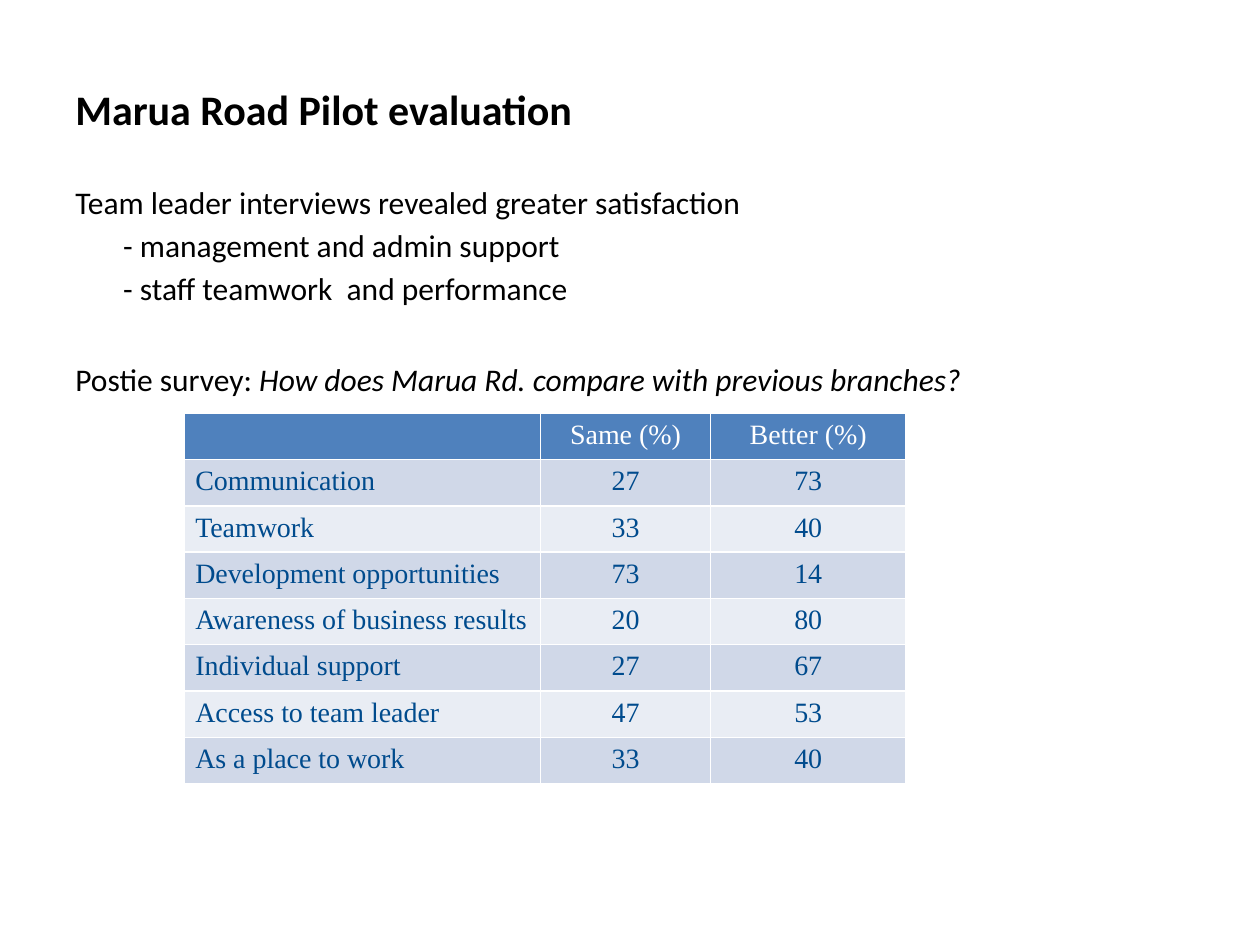
from dataclasses import dataclass

from lxml import etree
from pptx import Presentation
from pptx import util as u
from pptx.dml.color import RGBColor
from pptx.enum import text
from pptx.oxml import ns


@dataclass(frozen=True)
class Theme:
    body_font: str = "Calibri"
    table_font: str = "Times New Roman"
    title_size: float = 24
    body_size: float = 18
    table_size: float = 16
    ink: str = "000000"
    white: str = "FFFFFF"
    header: str = "4F81BD"
    table_ink: str = "004B8D"
    bands: tuple = ("D0D8E8", "E9EDF4")
    rule_width: float = 1


class SlideBuilder:
    def __init__(self, slide, theme):
        self.slide, self.theme = slide, theme

    def add_run(self, paragraph, words, font, size, color, bold=False, italic=False):
        run = paragraph.add_run()
        run.text = words
        run.font.name, run.font.size = font, u.Pt(size)
        run.font.bold, run.font.italic = bold, italic
        run.font.color.rgb = RGBColor.from_string(color)

    def add_body(self, left, top, width, height, top_inset, lines):
        """Each line is (space before, indent, size, bold, [(words, italic)])."""
        frame = self.slide.shapes.add_textbox(
            *map(u.Inches, (left, top, width, height))).text_frame
        frame.word_wrap = True
        frame.margin_top = u.Inches(top_inset)
        for i, (before, indent, size, bold, runs) in enumerate(lines):
            paragraph = frame.add_paragraph() if i else frame.paragraphs[0]
            paragraph.space_before = u.Pt(before)
            paragraph._p.get_or_add_pPr().set("marL", str(u.Inches(indent)))
            for words, italic in runs:
                self.add_run(paragraph, words, self.theme.body_font, size,
                             self.theme.ink, bold, italic)

    def add_borders(self, cell):
        properties = cell._tc.get_or_add_tcPr()
        for position, side in enumerate(("lnL", "lnR", "lnT", "lnB")):
            line = etree.Element(ns.qn("a:" + side), w=str(u.Pt(self.theme.rule_width)))
            fill = etree.SubElement(line, ns.qn("a:solidFill"))
            etree.SubElement(fill, ns.qn("a:srgbClr"), val=self.theme.white)
            properties.insert(position, line)

    def add_cell(self, cell, words, fill, color, centred):
        cell.fill.solid()
        cell.fill.fore_color.rgb = RGBColor.from_string(fill)
        cell.margin_left = cell.margin_right = u.Inches(0.09)
        cell.margin_top = cell.margin_bottom = u.Inches(0.05)
        self.add_borders(cell)
        paragraph = cell.text_frame.paragraphs[0]
        if centred:
            paragraph.alignment = text.PP_ALIGN.CENTER
        if words:
            self.add_run(paragraph, words, self.theme.table_font,
                         self.theme.table_size, color)
        else:
            # Keeps the blank corner cell from stretching its row
            end = paragraph._p.get_or_add_endParaRPr()
            end.set("sz", str(int(self.theme.table_size * 100)))

    def add_table(self, left, top, height, widths, rows):
        table = self.slide.shapes.add_table(
            len(rows), len(widths),
            *map(u.Inches, (left, top, sum(widths), height))).table
        for column, width in zip(table.columns, widths):
            column.width = u.Inches(width)
        for r, values in enumerate(rows):
            fill = self.theme.bands[(r - 1) % 2] if r else self.theme.header
            color = self.theme.table_ink if r else self.theme.white
            for c, value in enumerate(values):
                self.add_cell(table.cell(r, c), str(value), fill, color, c > 0)


def main():
    deck = Presentation()
    deck.slide_width, deck.slide_height = u.Inches(10), u.Inches(7.5)
    theme = Theme()
    builder = SlideBuilder(deck.slides.add_slide(deck.slide_layouts[6]), theme)

    # Title, interview findings and survey question
    size, line_gap, indent = theme.body_size, 3.2, 0.38
    builder.add_body(0.5, 0.39, 9, 6.31, 0.27, [
        (0, 0, theme.title_size, True, [("Marua Road Pilot evaluation", False)]),
        (28, 0, size, False,
         [("Team leader interviews revealed greater satisfaction", False)]),
        (line_gap, indent, size, False, [("- management and admin support", False)]),
        (line_gap, indent, size, False, [("- staff teamwork  and performance", False)]),
        (30, 0, size, False,
         [("Postie survey: ", False),
          ("How does Marua Rd. compare with previous branches?", True)]),
    ])

    # Survey results
    builder.add_table(1.46, 3.28, 2.94, (2.83, 1.35, 1.55), [
        ("", "Same (%)", "Better (%)"),
        ("Communication", 27, 73),
        ("Teamwork", 33, 40),
        ("Development opportunities", 73, 14),
        ("Awareness of business results", 20, 80),
        ("Individual support", 27, 67),
        ("Access to team leader", 47, 53),
        ("As a place to work", 33, 40),
    ])

    deck.save("out.pptx")


if __name__ == "__main__":
    main()
